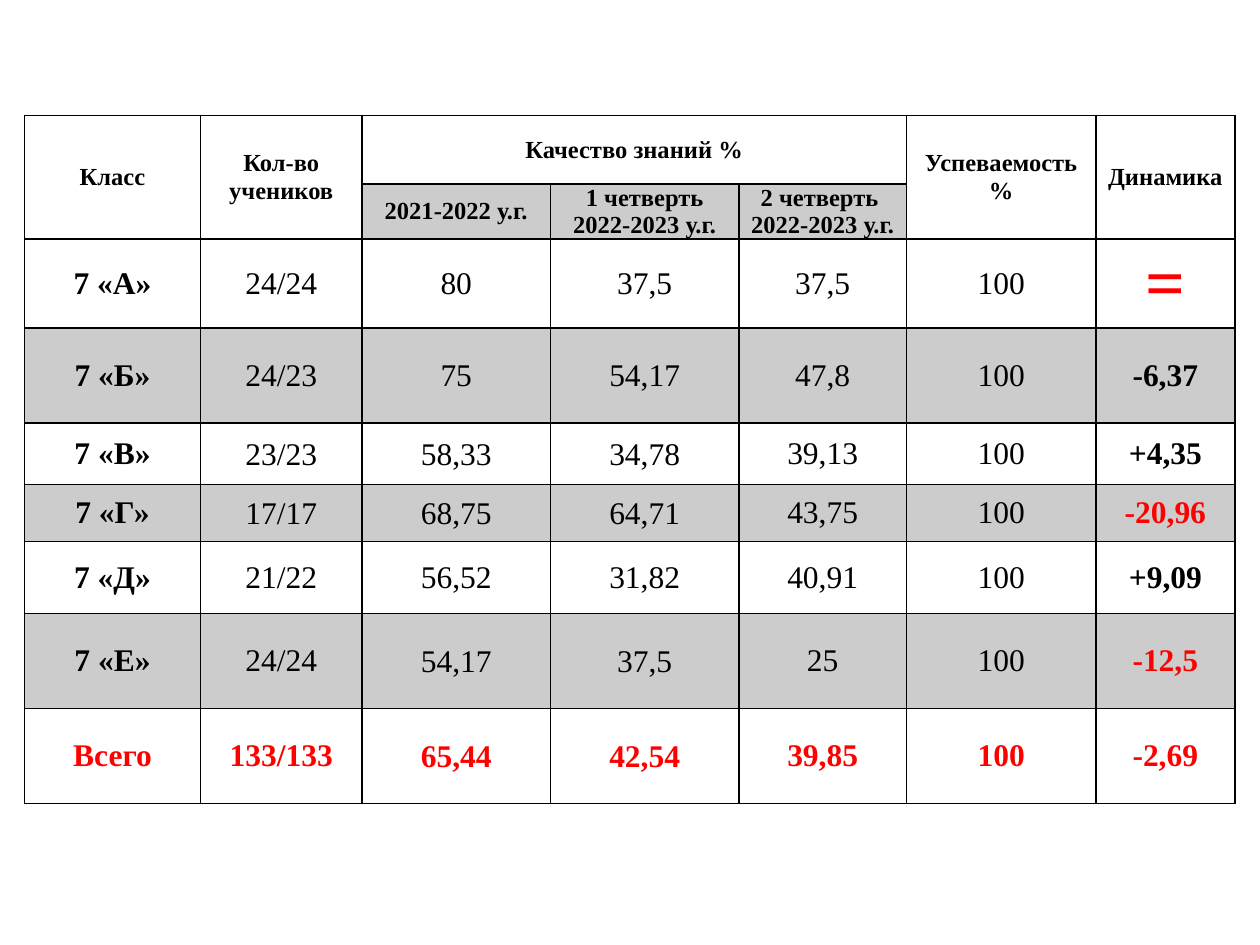
from pptx import Presentation
from pptx import util as u
from pptx.dml.color import RGBColor
from pptx.enum import text
from pptx.oxml.ns import qn
from lxml import etree

BLACK = RGBColor(0x00, 0x00, 0x00)
RED = RGBColor(0xFF, 0x00, 0x00)
FONT = "Times New Roman"

COLUMN_WIDTHS = [100.6, 92.3, 107.7, 107.7, 95.7, 108.3, 79.4]
ROW_HEIGHTS = [39.2, 31.4, 50.9, 54.3, 35.1, 32.6, 41.1, 54.3, 54.3]
ROWS = [
    ["Класс", "Кол-во учеников", "Качество знаний %", "", "", "Успеваемость %", "Динамика"],
    ["", "", "2021-2022 у.г.", "1 четверть\n2022-2023 у.г.", "2 четверть \n2022-2023 у.г.", "", ""],
    ["7 «А»", "24/24", "80", "37,5", "37,5", "100", "="],
    ["7 «Б»", "24/23", "75", "54,17", "47,8", "100", "-6,37"],
    ["7 «В»", "23/23", "58,33", "34,78", "39,13", "100", "+4,35"],
    ["7 «Г»", "17/17", "68,75", "64,71", "43,75", "100", "-20,96"],
    ["7 «Д»", "21/22", "56,52", "31,82", "40,91", "100", "+9,09"],
    ["7 «Е»", "24/24", "54,17", "37,5", "25", "100", "-12,5"],
    ["Всего", "133/133", "65,44", "42,54", "39,85", "100", "-2,69"],
]
HEADER_ROWS = 2
TOTAL_ROW = len(ROWS) - 1
DYNAMICS = len(COLUMN_WIDTHS) - 1
RED_DYNAMICS = {"=", "-20,96", "-12,5"}


def add_borders(cell):
    properties = cell._tc.get_or_add_tcPr()
    for side in ("a:lnL", "a:lnR", "a:lnT", "a:lnB"):
        line = etree.SubElement(properties, qn(side), w=str(u.Pt(1)))
        fill = etree.SubElement(line, qn("a:solidFill"))
        etree.SubElement(fill, qn("a:srgbClr"), val=str(BLACK))


def shade(cell):
    cell.fill.solid()
    cell.fill.fore_color.rgb = BLACK
    color = cell._tc.tcPr.find(qn("a:solidFill")).find(qn("a:srgbClr"))
    etree.SubElement(color, qn("a:alpha"), val="20000")


presentation = Presentation()
presentation.slide_width = u.Pt(720)
presentation.slide_height = u.Pt(540)
slide = presentation.slides.add_slide(presentation.slide_layouts[6])

# Table grid
table = slide.shapes.add_table(
    len(ROWS), len(COLUMN_WIDTHS), u.Pt(14), u.Pt(66),
    u.Pt(sum(COLUMN_WIDTHS)), u.Pt(sum(ROW_HEIGHTS))).table
table.first_row = False
table.horz_banding = False
for column, width in zip(table.columns, COLUMN_WIDTHS):
    column.width = u.Pt(width)
for row, height in zip(table.rows, ROW_HEIGHTS):
    row.height = u.Pt(height)

# Merged headings
for column in (0, 1, 5, 6):
    table.cell(0, column).merge(table.cell(1, column))
table.cell(0, 2).merge(table.cell(0, 4))

# Cells
for r, values in enumerate(ROWS):
    for c, value in enumerate(values):
        cell = table.cell(r, c)
        header = r < HEADER_ROWS
        tight = not header and (c in (2, 3) or c == 1 and r < TOTAL_ROW - 1)
        cell.margin_left = cell.margin_right = u.Pt(0.75 if tight else 5)
        cell.margin_top = u.Pt(0.75 if tight else 0)
        cell.margin_bottom = 0
        cell.vertical_anchor = text.MSO_ANCHOR.MIDDLE
        add_borders(cell)
        if r % 2 and not cell.is_spanned:
            shade(cell)
        else:
            cell.fill.background()
        if not value:
            continue

        paragraph = cell.text_frame.paragraphs[0]
        paragraph.alignment = text.PP_ALIGN.CENTER
        red = r == TOTAL_ROW or value in RED_DYNAMICS
        for i, line in enumerate(value.split("\n")):
            if i:
                paragraph.add_line_break()
            run = paragraph.add_run()
            run.text = line
            run.font.name = FONT
            run.font.size = u.Pt(14 if header else 40 if value == "=" else 18)
            run.font.bold = header or r == TOTAL_ROW or c in (0, DYNAMICS)
            run.font.color.rgb = RED if red else BLACK

presentation.save("out.pptx")
